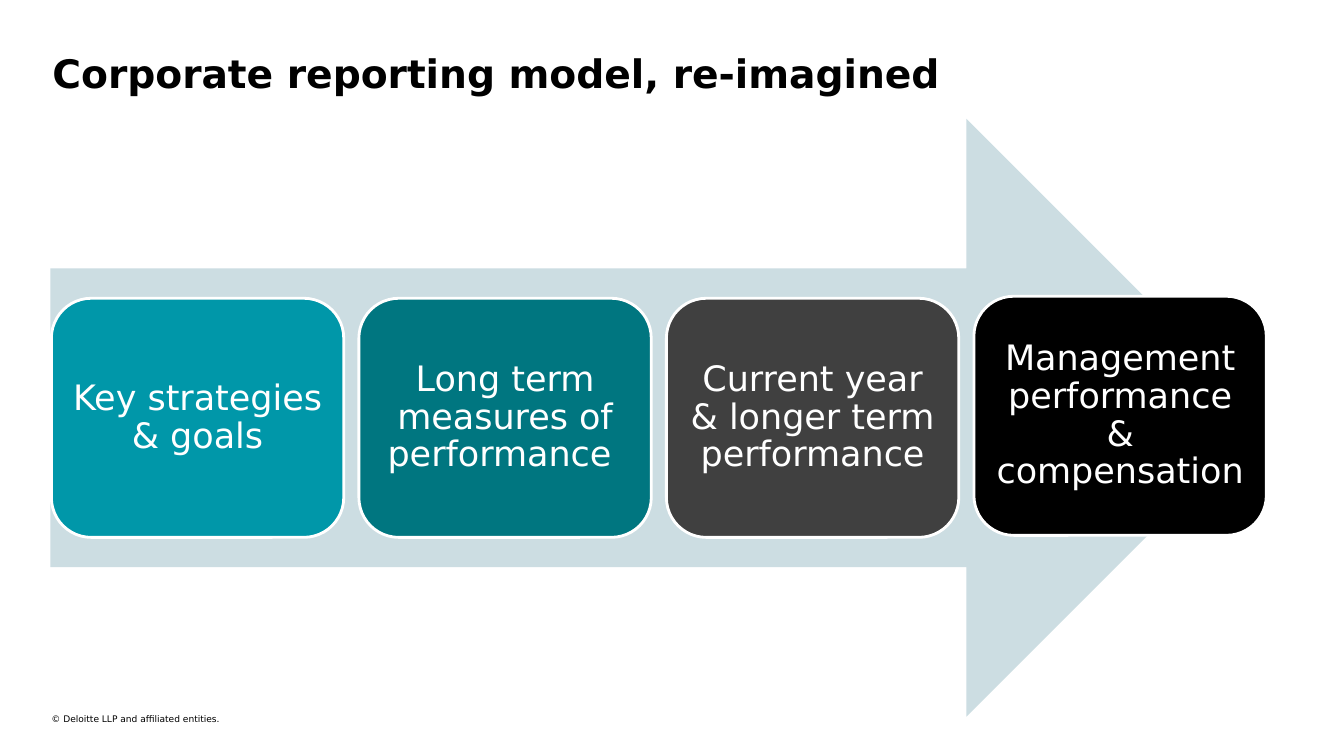
from pptx import Presentation
from pptx.dml.color import RGBColor
from pptx.enum.shapes import MSO_SHAPE
from pptx.enum.text import MSO_ANCHOR, PP_ALIGN
from pptx.util import Inches, Pt

FONT = "DejaVu Sans"
BLACK = RGBColor(0x00, 0x00, 0x00)
WHITE = RGBColor(0xFF, 0xFF, 0xFF)
PALE_BLUE = RGBColor(0xCC, 0xDD, 0xE2)
TEAL = RGBColor(0x00, 0x97, 0xA9)
DARK_TEAL = RGBColor(0x00, 0x76, 0x80)
CHARCOAL = RGBColor(0x40, 0x40, 0x40)

SLIDE_WIDTH, SLIDE_HEIGHT = 13.33, 7.5
ARROW_LEFT, ARROW_TOP, ARROW_WIDTH, ARROW_HEIGHT = 0.5, 1.18, 12.05, 5.93
STAGE_LEFT, STAGE_PITCH, STAGE_WIDTH = 0.51, 3.05, 2.9
STAGE_HEIGHT = ARROW_HEIGHT * 0.4
STAGE_TOP = ARROW_TOP + (ARROW_HEIGHT - STAGE_HEIGHT) / 2
LAST_STAGE_LIFT = 0.02

STAGES = [
    ("Key strategies & goals", TEAL, 0),
    ("Long term measures of performance ", DARK_TEAL, 0),
    ("Current year & longer term performance", CHARCOAL, 0),
    ("Management performance & compensation", BLACK, LAST_STAGE_LIFT),
]


def write_text(shape, text, size, color=BLACK, bold=False, align=PP_ALIGN.LEFT,
               anchor=MSO_ANCHOR.TOP, margins=(0.1, 0.05), line_spacing=1.0):
    frame = shape.text_frame
    frame.word_wrap = True
    frame.vertical_anchor = anchor
    frame.margin_left = frame.margin_right = Inches(margins[0])
    frame.margin_top = frame.margin_bottom = Inches(margins[1])
    paragraph = frame.paragraphs[0]
    paragraph.alignment = align
    paragraph.line_spacing = line_spacing
    paragraph.space_before = Pt(0)
    run = paragraph.add_run()
    run.text = text
    run.font.name = FONT
    run.font.size = Pt(size)
    run.font.bold = bold
    run.font.color.rgb = color


def add_filled_shape(slide, kind, left, top, width, height, fill, line=None):
    shape = slide.shapes.add_shape(
        kind, Inches(left), Inches(top), Inches(width), Inches(height))
    shape.shadow.inherit = False
    shape.fill.solid()
    shape.fill.fore_color.rgb = fill
    if line is None:
        shape.line.fill.background()
    else:
        shape.line.color.rgb = line
        shape.line.width = Pt(2)
    return shape


def add_title(slide, text):
    title = slide.shapes.title
    title.left, title.top = Inches(0.42), Inches(0.44)
    title.width, title.height = Inches(12.31), Inches(0.37)
    write_text(title, text, 28, bold=True)


def add_stage(slide, column, text, fill, lift):
    stage = add_filled_shape(
        slide, MSO_SHAPE.ROUNDED_RECTANGLE,
        STAGE_LEFT + column * STAGE_PITCH, STAGE_TOP - lift,
        STAGE_WIDTH, STAGE_HEIGHT, fill, line=WHITE)
    write_text(stage, text, 25, color=WHITE, align=PP_ALIGN.CENTER,
               anchor=MSO_ANCHOR.MIDDLE, margins=(0.1, 0.1), line_spacing=0.9)


def add_copyright(slide, text):
    box = slide.shapes.add_textbox(
        Inches(STAGE_LEFT), Inches(7.08), Inches(5.86), Inches(0.11))
    write_text(box, text, 6.5, margins=(0, 0))


def main():
    presentation = Presentation()
    presentation.slide_width = Inches(SLIDE_WIDTH)
    presentation.slide_height = Inches(SLIDE_HEIGHT)
    slide = presentation.slides.add_slide(presentation.slide_layouts[5])
    add_copyright(slide, "© Deloitte LLP and affiliated entities.")
    add_title(slide, "Corporate reporting model, re-imagined")
    add_filled_shape(slide, MSO_SHAPE.RIGHT_ARROW, ARROW_LEFT, ARROW_TOP,
                     ARROW_WIDTH, ARROW_HEIGHT, PALE_BLUE)
    for column, (text, fill, lift) in enumerate(STAGES):
        add_stage(slide, column, text, fill, lift)
    presentation.save("out.pptx")


if __name__ == "__main__":
    main()
